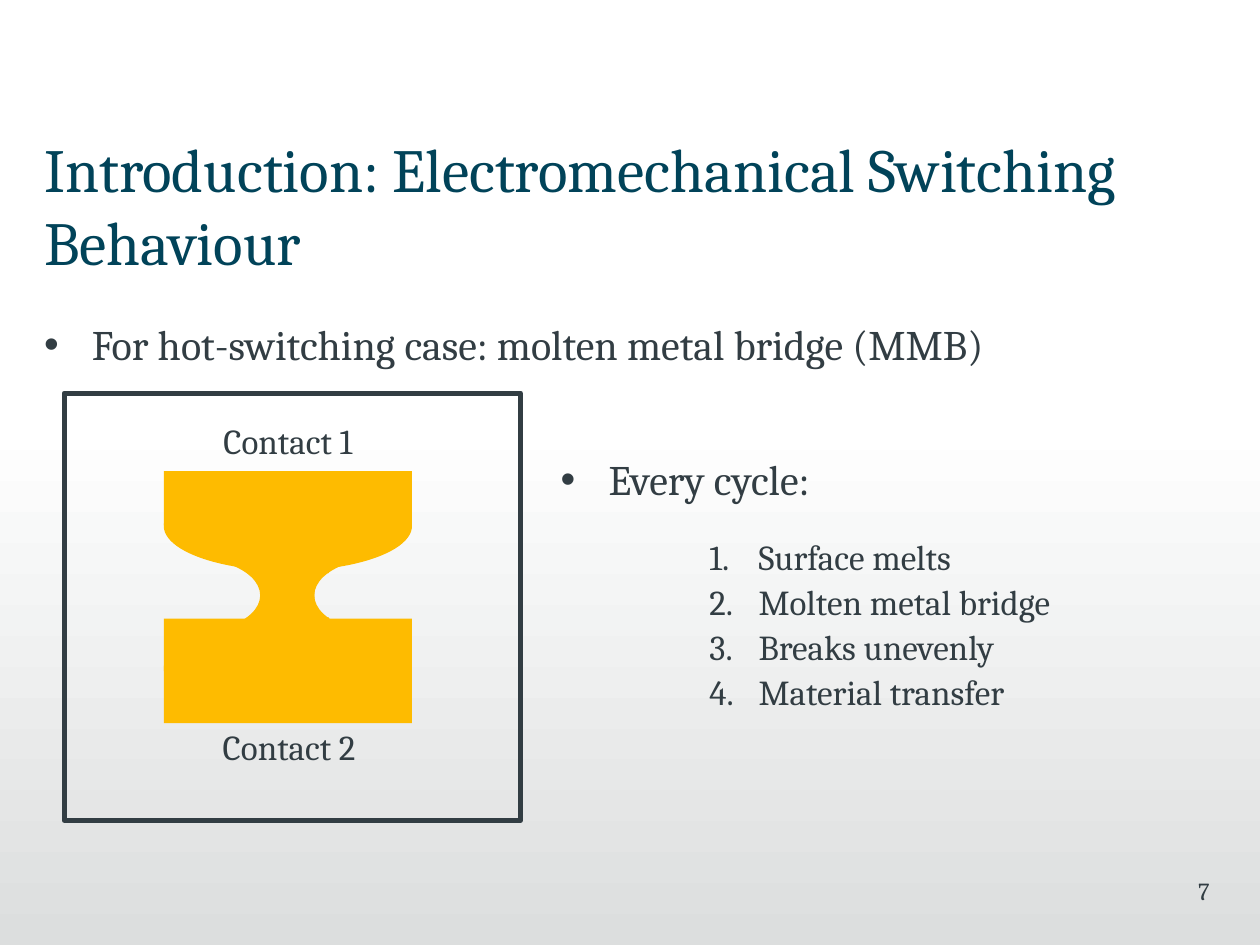
from dataclasses import dataclass

from lxml import etree
from pptx import Presentation
from pptx import util as u
from pptx.dml.color import RGBColor
from pptx.enum import shapes, text
from pptx.oxml.ns import qn


@dataclass(frozen=True)
class Theme:
    font: str = "Cambria"
    title: str = "014359"
    ink: str = "323D43"
    metal: str = "FEBB00"
    fade: tuple = ("FFFFFF", "DCDEDE")
    title_size: int = 35
    body_size: int = 24
    detail_size: int = 20
    number_size: int = 14


@dataclass(frozen=True)
class Box:
    left: float
    top: float
    width: float
    height: float

    def inner(self, left, top, width, height):
        return Box(self.left + left, self.top + top, width, height)

    def lengths(self):
        cells = (self.left, self.top, self.width, self.height)
        return [u.Emu(round(cell * CELL)) for cell in cells]


THEME = Theme()
COLUMNS, ROWS = 100, 75
CELL = u.Inches(0.1)
PAGE = Box(0, 0, COLUMNS, ROWS)
PRESET = shapes.MSO_SHAPE
ALIGN = text.PP_ALIGN


def style(paragraph, size, color=THEME.ink, align=ALIGN.LEFT):
    paragraph.alignment = align
    paragraph.font.name = THEME.font
    paragraph.font.size = u.Pt(size)
    paragraph.font.color.rgb = RGBColor.from_string(color)


def mark(paragraph, margin, hanging, tag, **attributes):
    properties = paragraph._p.get_or_add_pPr()
    properties.set("marL", str(u.Inches(margin)))
    properties.set("indent", str(-u.Inches(hanging)))
    if tag == "a:buChar":
        etree.SubElement(properties, qn("a:buFont"), typeface="Arial")
    etree.SubElement(properties, qn(tag), **attributes)


def place(placeholder, box):
    placeholder.left, placeholder.top, placeholder.width, placeholder.height = box.lengths()
    frame = placeholder.text_frame
    frame.margin_left = 0
    frame.word_wrap = True
    frame.auto_size = text.MSO_AUTO_SIZE.NONE
    frame.vertical_anchor = text.MSO_ANCHOR.TOP
    return frame


def add_piece(parent, preset, box, color=THEME.metal):
    piece = parent.add_shape(preset, *box.lengths())
    piece.shadow.inherit = False
    piece.line.fill.background()
    piece.fill.solid()
    piece.fill.fore_color.rgb = RGBColor.from_string(color)
    return piece


def add_label(slide, box, wording, size, align):
    frame = slide.shapes.add_textbox(*box.lengths()).text_frame
    frame.word_wrap = True
    frame.text = wording
    style(frame.paragraphs[0], size, align=align)
    return frame


def add_backdrop(slide, box):
    backdrop = add_piece(slide.shapes, PRESET.RECTANGLE, box)
    backdrop.fill.gradient()
    backdrop.fill.gradient_angle = 270
    for stop, color, position in zip(backdrop.fill.gradient_stops, THEME.fade, (0, 1)):
        stop.color.rgb = RGBColor.from_string(color)
        stop.position = position
    tree = backdrop.element.getparent()
    tree.insert(2, backdrop.element)


def add_title(slide, box, wording):
    frame = place(slide.shapes.title, box)
    frame.text = wording
    style(frame.paragraphs[0], THEME.title_size, THEME.title)


def add_list(placeholder, box, heading, steps=()):
    frame = place(placeholder, box)
    frame.text = heading
    first = frame.paragraphs[0]
    first.space_before = u.Pt(0)
    first.space_after = u.Pt(16.8)
    mark(first, 0.38, 0.38, "a:buChar", char="•")
    style(first, THEME.body_size)
    for step in steps:
        item = frame.add_paragraph()
        item.text = step
        item.level = 2
        item.line_spacing = 0.9
        item.space_before = u.Pt(4)
        mark(item, 1.57, 0.39, "a:buAutoNum", type="arabicPeriod")
        style(item, THEME.detail_size)


def add_contact(slide, box, block, tip):
    contact = slide.shapes.add_group_shape().shapes
    for preset, (top, height) in ((PRESET.RECTANGLE, block), (PRESET.OVAL, tip)):
        add_piece(contact, preset, box.inner(0, top, box.width, height))


def add_bridge(slide, box):
    bridge = slide.shapes.add_group_shape().shapes
    half = box.width / 2
    add_piece(bridge, PRESET.MOON, box.inner(half, 0, half, box.height))
    add_piece(bridge, PRESET.MOON, box.inner(0, 0, half, box.height)).rotation = 180
    add_piece(bridge, PRESET.RECTANGLE, box.inner(half / 2, 0, half, box.height))
    for top in (-1, 4.1):
        add_piece(bridge, PRESET.RECTANGLE, box.inner(1.1, top, 6.5, 1.6))


def add_diagram(slide, box):
    add_contact(slide, box.inner(7.9, 6.2, 19.7, 7.9), (0, 4.3), (0.8, 7.1))
    add_contact(slide, box.inner(7.9, 17.9, 19.7, 8.3), (0, 8.3), (0.4, 7.1))
    add_bridge(slide, box.inner(13.4, 13.7, 8.6, 4.7))
    for wording, left, top in (("Contact 1", 8.7, 1.6), ("Contact 2", 8.8, 25.9)):
        add_label(slide, box.inner(left, top, 18.1, 4.4), wording,
                  THEME.detail_size, ALIGN.CENTER)
    border = add_piece(slide.shapes, PRESET.RECTANGLE, box)
    border.fill.background()
    border.line.color.rgb = RGBColor.from_string(THEME.ink)
    border.line.width = u.Pt(3)


def add_number(slide, box, number):
    frame = add_label(slide, box, number, THEME.number_size, ALIGN.RIGHT)
    frame.margin_right = 0


def build_slide(deck):
    slide = deck.slides.add_slide(deck.slide_layouts.get_by_name("Two Content"))
    _, case, cycle = slide.placeholders
    add_backdrop(slide, PAGE.inner(0, 33.3, COLUMNS, ROWS - 33.3))
    add_title(slide, PAGE.inner(3.5, 9.9, 92.9, 7.1),
              "Introduction: Electromechanical Switching Behaviour")
    add_list(case, PAGE.inner(3.5, 24.8, 92.9, 45),
             "For hot-switching case: molten metal bridge (MMB)")
    add_number(slide, PAGE.inner(75.2, 69, 20.8, 5), "7")
    add_list(cycle, PAGE.inner(44.5, 35.5, 43.3, 25.6), "Every cycle:",
             ("Surface melts", "Molten metal bridge", "Breaks unevenly", "Material transfer"))
    add_diagram(slide, PAGE.inner(5.1, 31.2, 36.2, 33.9))


def main():
    deck = Presentation()
    deck.slide_width, deck.slide_height = COLUMNS * CELL, ROWS * CELL
    build_slide(deck)
    deck.save("out.pptx")


if __name__ == "__main__":
    main()
